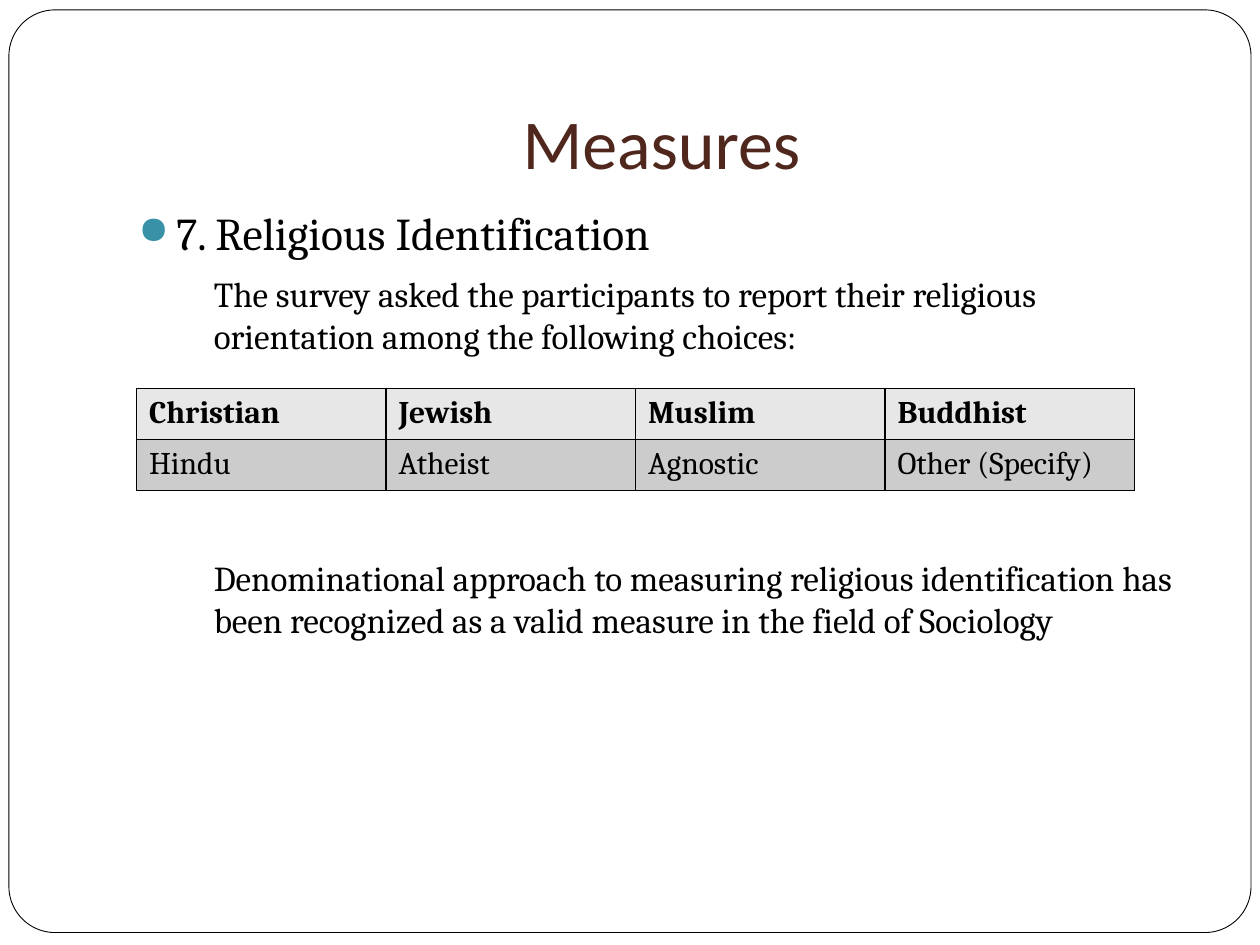
from lxml import etree
from pptx import Presentation
from pptx import util as u
from pptx.dml.color import RGBColor
from pptx.enum import shapes, text
from pptx.oxml.ns import qn

COLORS = {
    "paper": "FFFFFF",
    "ink": "000000",
    "title": "4F271C",
    "bullet": "3891A7",
    "header": "E7E7E7",
    "row": "CCCCCC",
}


def color(name):
    return RGBColor.from_string(COLORS[name])


def style(paragraph, size, font="Cambria", ink="ink", bold=False):
    for run in paragraph.runs:
        run.font.size = u.Pt(size)
        run.font.name = font
        run.font.bold = bold
        run.font.color.rgb = color(ink)


presentation = Presentation()
presentation.slide_width = u.Cm(25.4)
presentation.slide_height = u.Cm(19.05)
slide = presentation.slides.add_slide(presentation.slide_layouts[6])

frame = slide.shapes.add_shape(
    shapes.MSO_SHAPE.ROUNDED_RECTANGLE, u.Cm(0.18), u.Cm(0.2), u.Cm(25.04), u.Cm(18.6)
)
frame.adjustments[0] = 0.05
frame.shadow.inherit = False
frame.fill.solid()
frame.fill.fore_color.rgb = color("paper")
frame.line.color.rgb = color("ink")
frame.line.width = u.Pt(0.5)

title = slide.shapes.add_textbox(u.Cm(2.54), u.Cm(0.76), u.Cm(21.59), u.Cm(3.18))
title.text_frame.word_wrap = True
title.text_frame.vertical_anchor = text.MSO_ANCHOR.BOTTOM
title.text_frame.margin_bottom = u.Cm(0.25)
title.text_frame.text = "Measures"
heading = title.text_frame.paragraphs[0]
heading.alignment = text.PP_ALIGN.CENTER
style(heading, 40, "Calibri", "title")

body = slide.shapes.add_textbox(u.Cm(2.54), u.Cm(4.01), u.Cm(21.59), u.Cm(12.7))
body.text_frame.word_wrap = True
body_lines = [
    ("7. Religious Identification", 26, 5.8, 0.76, -0.76),
    ("The survey asked the participants to report their religious orientation "
     "among the following choices:", 20, 7.5, 1.52, 0),
    ("Denominational approach to measuring religious identification has been "
     "recognized as a valid measure in the field of Sociology", 20, 114, 1.52, 0),
]
body.text_frame.text = "\n".join(line[0] for line in body_lines)
for paragraph, (_, size, space, margin, indent) in zip(body.text_frame.paragraphs, body_lines):
    style(paragraph, size)
    paragraph.space_before = u.Pt(space)
    properties = paragraph._p.get_or_add_pPr()
    properties.set("marL", str(u.Cm(margin)))
    properties.set("indent", str(u.Cm(indent)))

properties = body.text_frame.paragraphs[0]._p.get_or_add_pPr()
bullet_color = etree.SubElement(properties, qn("a:buClr"))
etree.SubElement(bullet_color, qn("a:srgbClr"), val=COLORS["bullet"])
etree.SubElement(properties, qn("a:buSzPct"), val="85000")
etree.SubElement(properties, qn("a:buChar"), char="●")

choices = [
    ["Christian", "Jewish", "Muslim", "Buddhist"],
    ["Hindu", "Atheist", "Agnostic", "Other (Specify)"],
]
table = slide.shapes.add_table(
    2, 4, u.Cm(2.75), u.Cm(7.83), u.Cm(20.12), u.Cm(2.06)
).table
for row_index, row in enumerate(choices):
    for column_index, choice in enumerate(row):
        cell = table.cell(row_index, column_index)
        cell.text_frame.text = choice
        style(cell.text_frame.paragraphs[0], 18, bold=row_index == 0)
        cell_properties = cell._tc.get_or_add_tcPr()
        for side in ("lnL", "lnR", "lnT", "lnB"):
            border = etree.SubElement(cell_properties, qn(f"a:{side}"), w=str(u.Pt(1)))
            border_fill = etree.SubElement(border, qn("a:solidFill"))
            etree.SubElement(border_fill, qn("a:srgbClr"), val=COLORS["ink"])
        cell.fill.solid()
        cell.fill.fore_color.rgb = color("row" if row_index else "header")

presentation.save("out.pptx")
